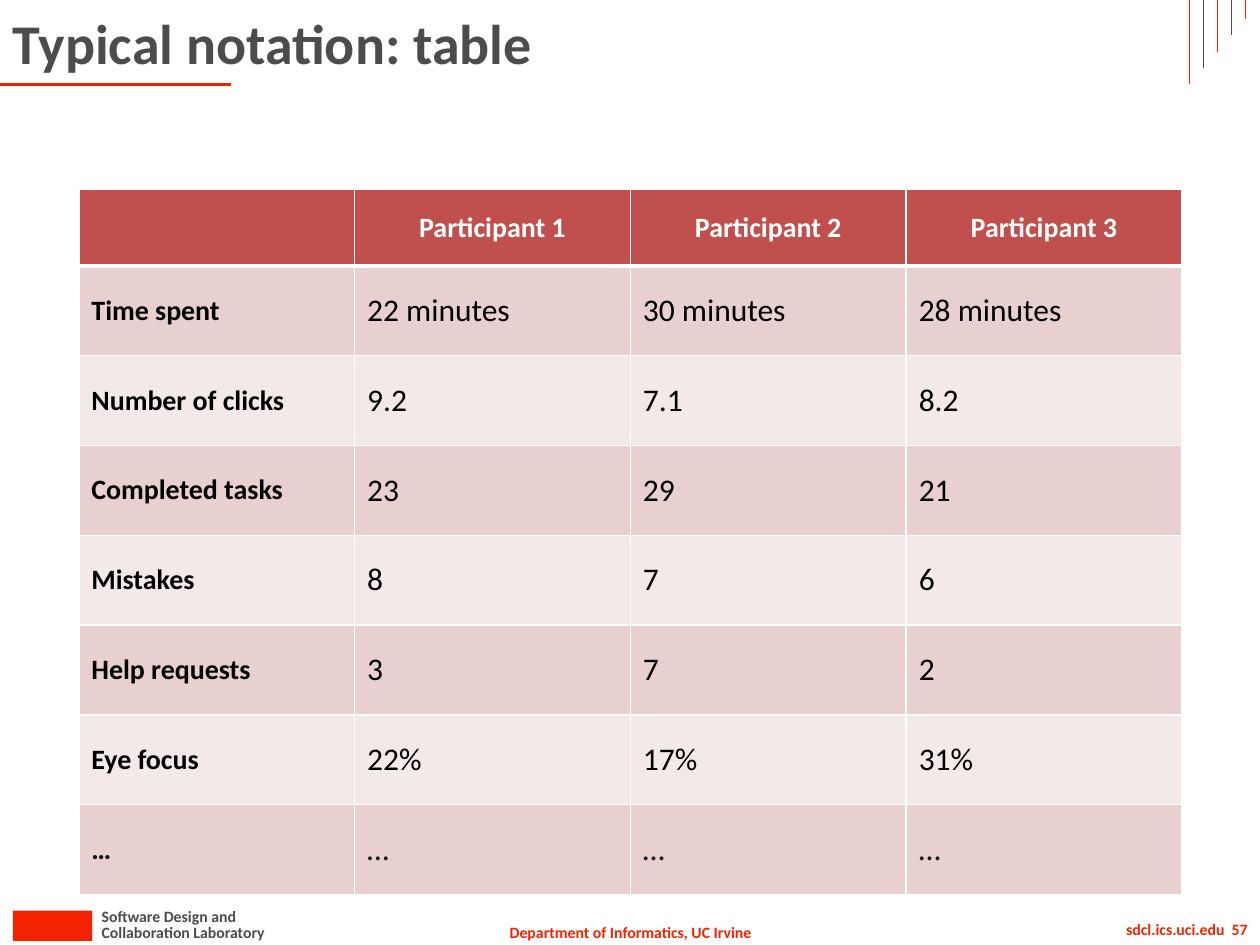
from lxml import etree
from pptx import Presentation
from pptx.dml.color import RGBColor
from pptx.enum import shapes, text
from pptx.oxml import ns
from pptx.util import Cm, Pt

RED = RGBColor(0xF3, 0x22, 0x00)
GRAY = RGBColor(0x4C, 0x4C, 0x4C)
BLACK = RGBColor(0x00, 0x00, 0x00)
WHITE = RGBColor(0xFF, 0xFF, 0xFF)
HEADER = RGBColor(0xC0, 0x50, 0x4D)
BANDS = (RGBColor(0xF4, 0xE9, 0xE9), RGBColor(0xE8, 0xD0, 0xD0))
LEFT, CENTER, RIGHT = text.PP_ALIGN.LEFT, text.PP_ALIGN.CENTER, text.PP_ALIGN.RIGHT

ROWS = [
    ("", "Participant 1", "Participant 2", "Participant 3"),
    ("Time spent", "22 minutes", "30 minutes", "28 minutes"),
    ("Number of clicks", "9.2", "7.1", "8.2"),
    ("Completed tasks", "23", "29", "21"),
    ("Mistakes", "8", "7", "6"),
    ("Help requests", "3", "7", "2"),
    ("Eye focus", "22%", "17%", "31%"),
    ("…", "…", "…", "…"),
]
FOOTERS = [
    ("Department of Informatics, UC Irvine", 9.98, 18.47, 5.46, RED, CENTER),
    ("Collaboration Laboratory", 1.8, 18.47, 3.89, GRAY, LEFT),
    ("Software Design and", 1.8, 18.16, 3.28, GRAY, LEFT),
    ("sdcl.ics.uci.edu  57", 19.91, 18.42, 5.49, RED, RIGHT),
]


def write(frame, wording, size, color, bold=True, align=LEFT):
    frame.text = wording
    para = frame.paragraphs[0]
    para.alignment = align
    font = para.font
    font.name, font.size, font.bold = "Calibri", Pt(size), bold
    font.color.rgb = color


def add_title(page, wording):
    title = page.shapes.title
    title.left, title.top, title.width, title.height = Cm(0), Cm(0), Cm(22.86), Cm(1.7)
    write(title.text_frame, wording, 32, GRAY)
    title.text_frame.auto_size = text.MSO_AUTO_SIZE.NONE
    title.text_frame.vertical_anchor = text.MSO_ANCHOR.MIDDLE


def add_footer(page, wording, left, top, width, color, align):
    box = page.shapes.add_textbox(Cm(left), Cm(top), Cm(width), Cm(0.64))
    box.text_frame.word_wrap = False
    write(box.text_frame, wording, 9, color, align=align)


def add_block(page, left, top, width, height, color):
    block = page.shapes.add_shape(
        shapes.MSO_SHAPE.RECTANGLE, Cm(left), Cm(top), Cm(width), Cm(height))
    block.shadow.inherit = False
    block.fill.solid()
    block.fill.fore_color.rgb = color
    block.line.fill.background()


def add_line(page, start, end, color, width):
    line = page.shapes.add_connector(
        shapes.MSO_CONNECTOR.STRAIGHT, *map(Cm, start), *map(Cm, end))
    line.line.color.rgb = color
    line.line.width = Pt(width)
    etree.SubElement(line._element.spPr, ns.qn("a:effectLst"))


def add_borders(cell, top, bottom):
    properties = cell._tc.get_or_add_tcPr()
    widths = {"lnL": 1, "lnR": 1, "lnT": top, "lnB": bottom}
    for index, (side, width) in enumerate(widths.items()):
        border = etree.Element(ns.qn(f"a:{side}"), w=str(Pt(width)))
        fill = etree.SubElement(border, ns.qn("a:solidFill"))
        etree.SubElement(fill, ns.qn("a:srgbClr"), val=str(WHITE))
        properties.insert(index, border)


def style_cell(cell, wording, row, column):
    header, label = row == 0, column == 0
    cell.fill.solid()
    cell.fill.fore_color.rgb = HEADER if header else BANDS[row % 2]
    cell.vertical_anchor = text.MSO_ANCHOR.MIDDLE
    write(cell.text_frame, wording,
          size=16 if header or label else 18,
          color=WHITE if header else BLACK,
          bold=header or label,
          align=CENTER if header else LEFT)
    add_borders(cell, top=3 if row == 1 else 1, bottom=3 if header else 1)


def add_results(page):
    table = page.shapes.add_table(
        len(ROWS), len(ROWS[0]), Cm(1.59), Cm(3.81), Cm(22.24), Cm(14.22)).table
    for column in table.columns:
        column.width = Cm(5.56)
    for row, values in enumerate(ROWS):
        table.rows[row].height = Cm(1.81 if row else 1.55)
        for column, wording in enumerate(values):
            style_cell(table.cell(row, column), wording, row, column)


def main():
    deck = Presentation()
    deck.slide_width, deck.slide_height = Cm(25.4), Cm(19.05)
    page = deck.slides.add_slide(deck.slide_layouts[5])
    add_block(page, 0.26, 18.36, 1.6, 0.61, RED)
    for footer in FOOTERS:
        add_footer(page, *footer)
    add_line(page, (0, 1.7), (4.65, 1.7), RED, 1.5)
    for step in range(5):
        x = 23.98 + 0.28 * step
        add_line(page, (x, 1.7 - 0.33 * step), (x, 0), GRAY if step % 2 else RED, 0.5)
    add_title(page, "Typical notation: table")
    add_results(page)
    deck.save("out.pptx")


if __name__ == "__main__":
    main()
